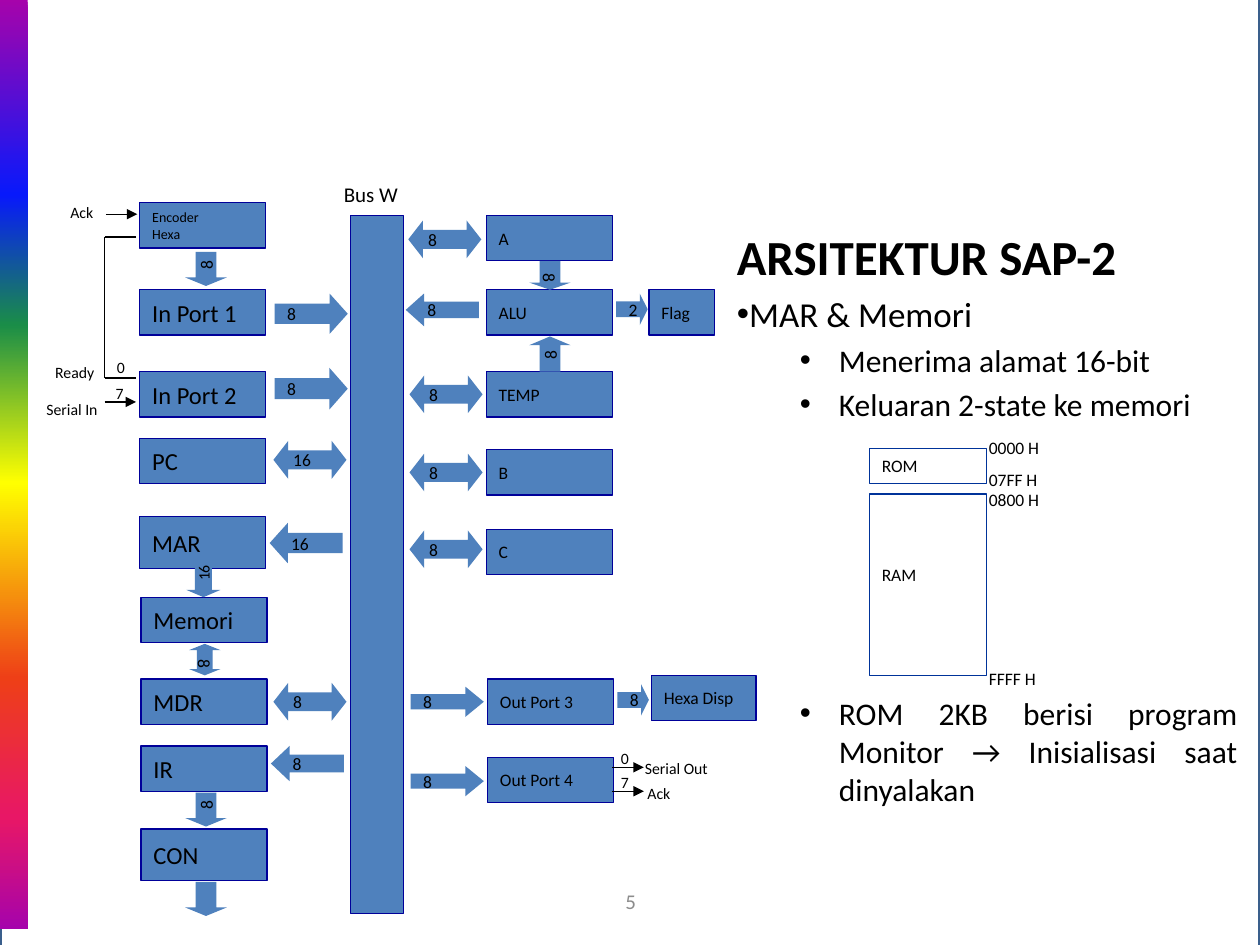
from dataclasses import dataclass

from lxml import etree
from pptx import Presentation
from pptx import util as u
from pptx.dml.color import RGBColor
from pptx.enum import shapes, text
from pptx.oxml.ns import qn

COLORS = {"block": "4F81BD", "border": "000099", "memory": "003399", "frame": "3A5F8C",
          "text": "000000", "number": "8C8C8C", "white": "FFFFFF"}
RAINBOW = [(0, "A603AB"), (21, "0819FB"), (35, "1A8D48"), (52, "FFFF00"),
           (73, "EE3F17"), (88, "E81766"), (100, "A603AB")]
FONT = "Calibri"
KIND = shapes.MSO_SHAPE


@dataclass
class Block:
    label: str
    left: float
    top: float
    width: float = 1
    height: float = 0.36
    size: int = 10


@dataclass
class Arrow:
    kind: KIND
    label: str
    left: float
    top: float
    width: float
    height: float
    head: float = 0.25
    size: int = 10
    direction: str = ""
    rotation: int = 0


@dataclass
class Label:
    label: str
    left: float
    top: float
    width: float
    height: float = 0.25
    size: int = 9
    wrap: bool = False


@dataclass
class Wire:
    start: tuple[float, float]
    end: tuple[float, float]
    arrow: bool = True


@dataclass
class Line:
    label: str
    size: int
    bullet: bool = True
    level: int = 0


BLOCKS = [
    Block("", 2.78, 1.71, 0.42, 5.54),
    Block("Encoder\nHexa", 1.11, 1.61, size=8),
    *[Block(name, 1.11, top, size=14)
      for name, top in [("In Port 1", 2.3), ("In Port 2", 2.95), ("PC", 3.48)]],
    Block("MAR", 1.11, 4.1, height=0.41, size=14),
    *[Block(name, 1.12, top, size=14)
      for name, top in [("Memori", 4.74), ("MDR", 5.39), ("IR", 5.92)]],
    Block("CON", 1.12, 6.58, height=0.41, size=14),
    *[Block(name, 3.86, top)
      for name, top in [("A", 1.71), ("ALU", 2.3), ("TEMP", 2.95), ("B", 3.57), ("C", 4.2)]],
    *[Block(name, 3.87, top) for name, top in [("Out Port 3", 5.39), ("Out Port 4", 6.01)]],
    Block("Hexa Disp", 5.17, 5.36, 0.83),
    Block("Flag", 5.15, 2.3, 0.52),
]
ARROWS = [
    Arrow(KIND.RIGHT_ARROW, "8", 2.18, 2.33, 0.58, 0.32, 0.45),
    Arrow(KIND.RIGHT_ARROW, "8", 2.18, 2.92, 0.58, 0.33, 0.44),
    *[Arrow(KIND.RIGHT_ARROW, "8", 3.26, top, 0.58, 0.24, 0.61) for top in (5.45, 6.08)],
    Arrow(KIND.RIGHT_ARROW, "8", 4.9, 5.43, 0.25, 0.25),
    Arrow(KIND.RIGHT_ARROW, "2", 4.89, 2.33, 0.25, 0.25),
    Arrow(KIND.LEFT_ARROW, "8", 3.22, 2.33, 0.58, 0.26, 0.56),
    Arrow(KIND.LEFT_ARROW, "16", 2.14, 4.15, 0.58, 0.32, 0.45),
    Arrow(KIND.LEFT_ARROW, "8", 2.15, 5.92, 0.58, 0.28, 0.53),
    *[Arrow(KIND.LEFT_RIGHT_ARROW, label, left, top, 0.58, 0.3, 0.39)
      for label, left, top in [("16", 2.17, 3.5), ("8", 2.17, 5.42), ("8", 3.24, 1.75),
                               ("8", 3.25, 2.98), ("8", 3.25, 3.6), ("8", 3.25, 4.21)]],
    Arrow(KIND.LEFT_RIGHT_ARROW, "8", 1.5, 5.11, 0.25, 0.25, 0.2, rotation=90),
    *[Arrow(KIND.DOWN_ARROW, label, 1.47, top, 0.33, 0.27, direction="vert270")
      for label, top in [("8", 2), ("8", 6.29), ("", 7)]],
    Arrow(KIND.DOWN_ARROW, "16", 1.48, 4.51, 0.27, 0.23, size=9, direction="vert270"),
    Arrow(KIND.DOWN_ARROW, "8", 4.2, 2.07, 0.33, 0.23, direction="vert"),
    Arrow(KIND.UP_ARROW, "8", 4.2, 2.67, 0.33, 0.28, direction="vert270"),
]
LABELS = [
    Label("Bus W", 2.63, 1.39, 0.69, 0.3, 12),
    Label("Ack", 0.46, 1.56, 0.41), Label("Ready", 0.34, 2.83, 0.56),
    Label("Serial In", 0.27, 3.12, 0.66), Label("0", 0.83, 2.79, 0.27),
    Label("7", 0.82, 3, 0.27), Label("0", 4.83, 5.89, 0.27), Label("7", 4.83, 6.08, 0.27),
    Label("Serial Out", 5.02, 5.97, 0.76), Label("Ack", 5.04, 6.17, 0.41),
    *[Label(address, 7.75, top, 0.83, 0.27, 10, True)
      for address, top in [("0000 H", 3.42), ("07FF H", 3.67), ("0800 H", 3.83), ("FFFF H", 5.25)]],
]
WIRES = [
    Wire((1.08, 1.88), (0.83, 1.88), False), Wire((0.83, 1.88), (0.83, 3), False),
    Wire((0.83, 3), (1.08, 3), False), Wire((0.83, 3.19), (1.08, 3.19)),
    Wire((0.84, 1.7), (1.09, 1.7)),
    *[Wire((4.86, y), (5.11, y)) for y in (6.09, 6.28)],
]
TOPICS = [Line("ARSITEKTUR SAP-2", 28, False), Line("MAR & Memori", 20),
          Line("Menerima alamat 16-bit", 18, level=1),
          Line("Keluaran 2-state ke memori", 18, level=1)]
ROM_NOTE = [Line("ROM 2KB berisi program Monitor → Inisialisasi saat dinyalakan", 18, level=1)]


def format_font(paragraph, size: int, color: str = "text", bold: bool = False) -> None:
    """Apply the slide font to every run of a paragraph."""
    for run in paragraph.runs:
        run.font.name, run.font.size, run.font.bold = FONT, u.Pt(size), bold
        run.font.color.rgb = RGBColor.from_string(COLORS[color])


def write(shape, label: str, size: int, wrap: bool = False, color: str = "text",
          align=text.PP_ALIGN.LEFT, anchor=text.MSO_ANCHOR.MIDDLE) -> None:
    """Put a formatted label into a shape."""
    frame = shape.text_frame
    frame.text, frame.word_wrap, frame.vertical_anchor = label, wrap, anchor
    for paragraph in frame.paragraphs:
        paragraph.alignment = align
        format_font(paragraph, size, color)


def add_shape(slide, kind, left: float, top: float, width: float, height: float,
              fill: str | None = None, line: str | None = None, weight: float = 0.75):
    """Add a shadowless preset shape."""
    shape = slide.shapes.add_shape(kind, *map(u.Inches, (left, top, width, height)))
    shape.shadow.inherit = False
    if fill:
        shape.fill.solid()
        shape.fill.fore_color.rgb = RGBColor.from_string(COLORS[fill])
    else:
        shape.fill.background()
    if line:
        shape.line.color.rgb = RGBColor.from_string(COLORS[line])
        shape.line.width = u.Pt(weight)
    else:
        shape.line.fill.background()
    return shape


def add_rainbow(slide) -> None:
    """Add the vertical gradient strip."""
    strip = add_shape(slide, KIND.RECTANGLE, 0, 0, 0.22, 7.37)
    strip.fill.gradient()
    strip.fill.gradient_angle = 270
    stops = next(strip._element.spPr.iter(qn("a:gsLst")))
    for stop in list(stops):
        stops.remove(stop)
    for position, color in RAINBOW:
        stop = etree.SubElement(stops, qn("a:gs"), pos=str(position * 1000))
        etree.SubElement(stop, qn("a:srgbClr"), val=color)


def add_block(slide, block: Block) -> None:
    """Add one register or port of the diagram."""
    shape = add_shape(slide, KIND.RECTANGLE, block.left, block.top, block.width, block.height,
                      "block", "border")
    write(shape, block.label, block.size)


def add_arrow(slide, arrow: Arrow) -> None:
    """Add one block arrow with its bit width."""
    shape = add_shape(slide, arrow.kind, arrow.left, arrow.top, arrow.width, arrow.height, "block")
    shape.adjustments[0], shape.adjustments[1] = 0.5, arrow.head
    shape.rotation = arrow.rotation
    write(shape, arrow.label, arrow.size)
    if arrow.direction:
        frame = shape.text_frame
        frame.margin_top = frame.margin_bottom = u.Inches(0.1)
        frame._txBody.bodyPr.set("vert", arrow.direction)


def add_label(slide, label: Label) -> None:
    """Add one free-standing label."""
    box = slide.shapes.add_textbox(*map(u.Inches, (label.left, label.top, label.width, label.height)))
    write(box, label.label, label.size, label.wrap, anchor=text.MSO_ANCHOR.TOP)


def add_wire(slide, wire: Wire) -> None:
    """Add one thin signal line."""
    connector = slide.shapes.add_connector(shapes.MSO_CONNECTOR.STRAIGHT,
                                           *map(u.Inches, wire.start + wire.end))
    connector.line.color.rgb = RGBColor.from_string(COLORS["text"])
    connector.line.width = u.Pt(0.75)
    if wire.arrow:
        etree.SubElement(connector.line._get_or_add_ln(), qn("a:tailEnd"), type="triangle")
    etree.SubElement(connector._element.spPr, qn("a:effectLst"))


def add_lines(slide, top: float, height: float, lines: list[Line]) -> None:
    """Add a justified box of heading and bullets."""
    box = slide.shapes.add_textbox(*map(u.Inches, (5.75, top, 4.17, height)))
    frame = box.text_frame
    frame.word_wrap = True
    for index, line in enumerate(lines):
        paragraph = frame.add_paragraph() if index else frame.paragraphs[0]
        paragraph.text, paragraph.level = line.label, line.level
        paragraph.alignment = text.PP_ALIGN.JUSTIFY
        paragraph.space_before = u.Pt(0.2 * line.size if index else 0)
        properties = paragraph._p.get_or_add_pPr()
        properties.set("marL", str(u.Inches(0.81 * line.level)))
        properties.set("indent", str(u.Inches(-0.31 * line.level)))
        if line.bullet:
            etree.SubElement(properties, qn("a:buFont"), typeface="Arial")
            etree.SubElement(properties, qn("a:buChar"), char="•")
        format_font(paragraph, line.size, bold=not line.bullet)


def main() -> None:
    """Build the architecture slide."""
    presentation = Presentation()
    presentation.slide_width, presentation.slide_height = u.Inches(10), u.Inches(7.5)
    slide = presentation.slides.add_slide(presentation.slide_layouts[6])
    add_shape(slide, KIND.RECTANGLE, 0, -0.11, 10, 7.8, "white", "frame", 2)
    add_rainbow(slide)
    number = slide.shapes.add_textbox(*map(u.Inches, (3.42, 6.95, 3.17, 0.4)))
    write(number, "5", 12, True, "number", text.PP_ALIGN.CENTER)
    add_lines(slide, 1.75, 1.75, TOPICS)
    add_lines(slide, 5.46, 1.02, ROM_NOTE)
    for name, top, height, margin in [("ROM", 3.56, 0.28, 0.05), ("RAM", 3.92, 1.44, 0.56)]:
        memory = add_shape(slide, KIND.RECTANGLE, 6.9, top, 0.93, height, line="memory")
        write(memory, name, 10, True, anchor=text.MSO_ANCHOR.TOP)
        memory.text_frame.margin_top = u.Inches(margin)
    for add, items in [(add_block, BLOCKS), (add_arrow, ARROWS), (add_wire, WIRES), (add_label, LABELS)]:
        for item in items:
            add(slide, item)
    presentation.save("out.pptx")


if __name__ == "__main__":
    main()
